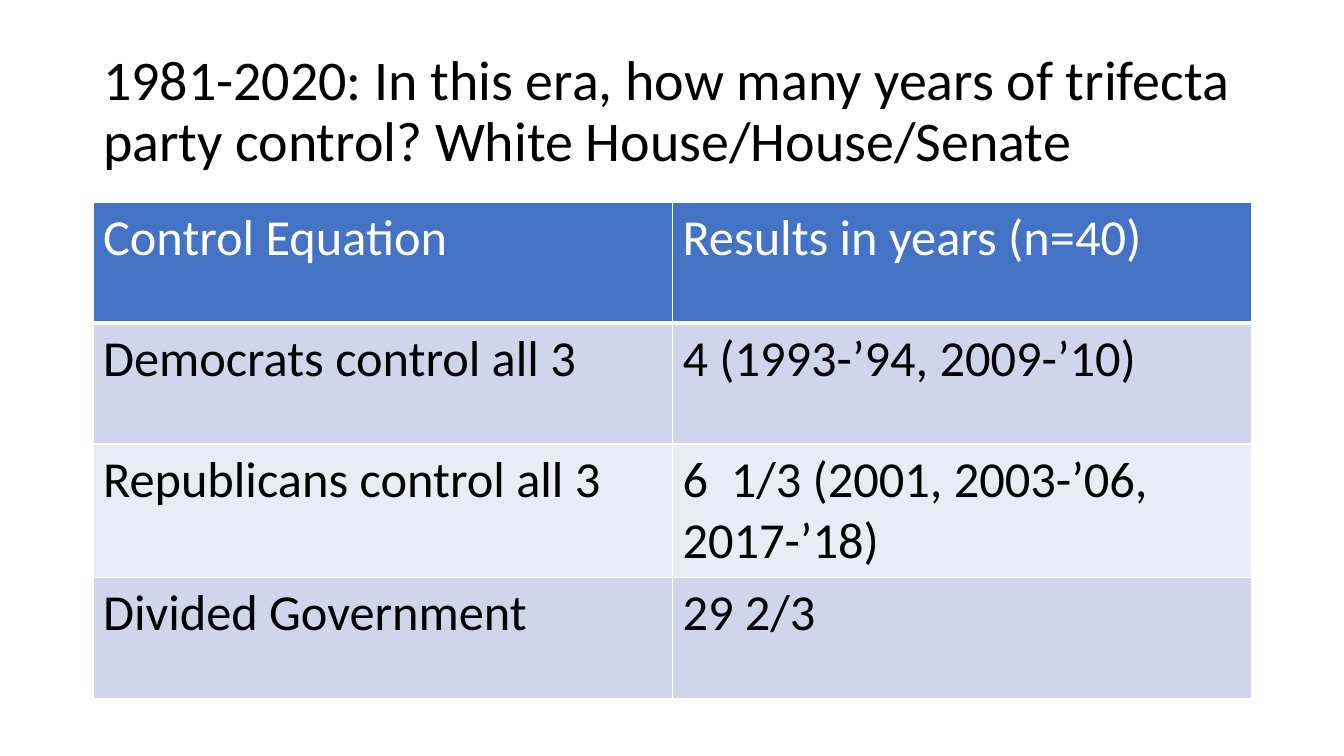
from lxml.etree import SubElement
from pptx import Presentation
from pptx.dml.color import RGBColor
from pptx.enum.text import MSO_ANCHOR, MSO_AUTO_SIZE, PP_ALIGN
from pptx.oxml.ns import qn
from pptx.util import Emu, Pt

FONT = "Calibri"
BLACK = RGBColor(0x00, 0x00, 0x00)
WHITE = RGBColor(0xFF, 0xFF, 0xFF)
HEADER_BLUE = RGBColor(0x44, 0x72, 0xC4)
BAND_DARK = RGBColor(0xCF, 0xD5, 0xEA)
BAND_LIGHT = RGBColor(0xE9, 0xEB, 0xF5)

TITLE = ("1981-2020: In this era, how many years of trifecta party control? "
         "White House/House/Senate")
ROWS = [
    ("Control Equation", "Results in years (n=40)"),
    ("Democrats control all 3", "4 (1993-’94, 2009-’10)"),
    ("Republicans control all 3", "6  1/3 (2001, 2003-’06, 2017-’18)"),
    ("Divided Government", "29 2/3"),
]
LEFT, WIDTH = 93, 1159
ROW_HEIGHT = 121


def px(n):
    return Emu(round(n * 914400 / 100.8))


def add_run(p, text, size, color):
    r = p.add_run()
    r.text = text
    r.font.name = FONT
    r.font.size = Pt(size)
    r.font.bold = False
    r.font.color.rgb = color


def set_title(sp, text):
    sp.left, sp.top, sp.width, sp.height = px(LEFT), px(40), px(WIDTH), px(146)
    tf = sp.text_frame
    tf.word_wrap = True
    tf.auto_size = MSO_AUTO_SIZE.NONE
    tf.vertical_anchor = MSO_ANCHOR.MIDDLE
    p = tf.paragraphs[0]
    p.alignment = PP_ALIGN.LEFT
    p.line_spacing = 0.9
    add_run(p, text, 40, BLACK)


def set_borders(cell, bottom):
    """Draw white cell edges, 1 pt except for the given bottom width."""
    tc_pr = cell._tc.get_or_add_tcPr()
    for side, width in (("L", 1), ("R", 1), ("T", 1), ("B", bottom)):
        ln = SubElement(tc_pr, qn(f"a:ln{side}"), w=str(Pt(width)))
        fill = SubElement(ln, qn("a:solidFill"))
        SubElement(fill, qn("a:srgbClr"), val=str(WHITE))


def fill_cell(cell, text, fill, color, bottom):
    set_borders(cell, bottom)
    cell.fill.solid()
    cell.fill.fore_color.rgb = fill
    add_run(cell.text_frame.paragraphs[0], text, 36, color)


def add_results_table(slide, rows):
    n_cols = len(rows[0])
    table = slide.shapes.add_table(len(rows), n_cols, px(LEFT), px(202), px(WIDTH),
                                   px(ROW_HEIGHT * len(rows))).table
    for i, texts in enumerate(rows):
        table.rows[i].height = px(ROW_HEIGHT)
        if i == 0:
            look = HEADER_BLUE, WHITE, 3
        else:
            look = BAND_DARK if i % 2 else BAND_LIGHT, BLACK, 1
        for j, text in enumerate(texts):
            fill_cell(table.cell(i, j), text, *look)


def main():
    prs = Presentation()
    prs.slide_width, prs.slide_height = px(1344), px(756)
    slide = prs.slides.add_slide(prs.slide_layouts[5])
    set_title(slide.shapes.title, TITLE)
    add_results_table(slide, ROWS)
    prs.save("out.pptx")


if __name__ == "__main__":
    main()
